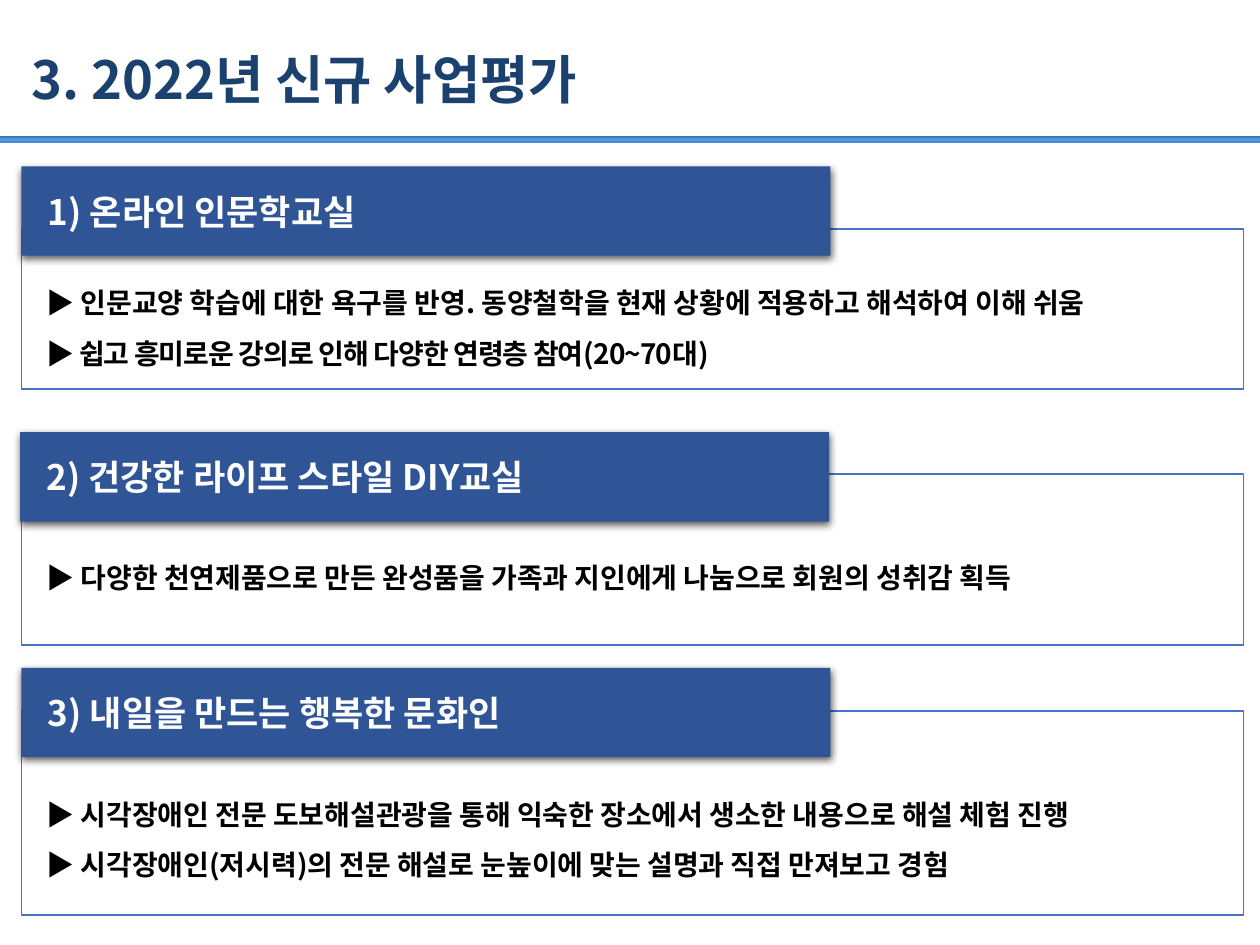
from copy import deepcopy

from pptx import Presentation
from pptx.dml.color import RGBColor as Color
from pptx.enum.shapes import MSO_SHAPE as Shape
from pptx.enum.text import MSO_ANCHOR as Anchor, MSO_AUTO_SIZE as AutoSize, PP_ALIGN as Align
from pptx.oxml.ns import qn
from pptx.oxml.xmlchemy import OxmlElement
from pptx.util import Inches, Pt

FONT = "Noto Sans CJK KR"
COLORS = {
    "title": "1B416F", "header": "2F5597", "border": "4472C4",
    "white": "FFFFFF", "black": "000000",
    "rule_top": "3469B6", "rule_middle": "559BDB", "rule_bottom": "448ACA",
}
COLUMNS, ROWS = 100, 75
COMPARISON_LAYOUT = 4
SECTIONS = [
    {"heading": "1) 온라인 인문학교실", "header_at": (1.7, 13.2),
     "frame_at": (1.7, 18.2, 97, 12.7), "top": 0.31,
     "lines": [("▶ 인문교양 학습에 대한 욕구를 반영. 동양철학을 현재 상황에 적용하고 해석하여 이해 쉬움", 0),
               ("▶ 쉽고 흥미로운 강의로 인해 다양한 연령층 참여(20~70대)", -0.5)]},
    {"heading": "2) 건강한 라이프 스타일 DIY교실", "header_at": (1.6, 34.3),
     "frame_at": (1.7, 37.6, 97, 13.6), "top": 0.55,
     "lines": [("▶ 다양한 천연제품으로 만든 완성품을 가족과 지인에게 나눔으로 회원의 성취감 획득", 0)]},
    {"heading": "3) 내일을 만드는 행복한 문화인", "header_at": (1.7, 53),
     "frame_at": (1.7, 56.4, 97, 16.2), "top": 0.55,
     "lines": [("▶ 시각장애인 전문 도보해설관광을 통해 익숙한 장소에서 생소한 내용으로 해설 체험 진행", 0),
               ("▶ 시각장애인(저시력)의 전문 해설로 눈높이에 맞는 설명과 직접 만져보고 경험", 0)]},
]


def add_child(parent, tag, **attributes):
    child = OxmlElement(tag)
    for name, value in attributes.items():
        child.set(name, str(value))
    parent.append(child)
    return child


def write_text(paragraph, text, size, color, spacing=0, line_height=None):
    paragraph.alignment = Align.LEFT
    paragraph.space_before = paragraph.space_after = Pt(0)
    paragraph.line_spacing = Pt(line_height) if line_height else 1.0
    properties = paragraph._p.get_or_add_pPr()
    properties.set("marL", "0")
    properties.set("indent", "0")
    add_child(properties, "a:buNone")
    run = paragraph.add_run()
    run.text = text
    font = run.font
    font.name, font.size, font.bold = FONT, Pt(size), True
    font.color.rgb = Color.from_string(COLORS[color])
    add_child(run._r.rPr, "a:ea", typeface=FONT)
    if spacing:
        run._r.rPr.set("spc", str(int(spacing * 100)))


class SlideBuilder:
    """Builds the elements of one slide on a shared grid and style."""

    def __init__(self, presentation):
        self.column = presentation.slide_width / COLUMNS
        self.row = presentation.slide_height / ROWS
        self.slide = presentation.slides.add_slide(presentation.slide_layouts[COMPARISON_LAYOUT])
        self.bodies = [shape for shape in self.slide.placeholders
                       if shape.placeholder_format.idx != 0]

    def box(self, left, top, width, height):
        return (int(left * self.column), int(top * self.row),
                int(width * self.column), int(height * self.row))

    def place(self, shape, *cells):
        shape.left, shape.top, shape.width, shape.height = self.box(*cells)

    def frame_text(self, shape, anchor, left, top, right, bottom):
        frame = shape.text_frame
        frame.word_wrap = True
        frame.auto_size = AutoSize.NONE
        frame.vertical_anchor = anchor
        frame.margin_left, frame.margin_top = Inches(left), Inches(top)
        frame.margin_right, frame.margin_bottom = Inches(right), Inches(bottom)
        return frame

    def rectangle(self, *cells):
        shape = self.slide.shapes.add_shape(Shape.RECTANGLE, *self.box(*cells))
        shape.line.fill.background()
        shape.shadow.inherit = False
        return shape

    def title(self, text):
        shape = self.slide.shapes.title
        self.place(shape, 0, 2.6, 100, 7.2)
        frame = self.frame_text(shape, Anchor.MIDDLE, 0.25, 0.04, 0.07, 0.04)
        write_text(frame.paragraphs[0], text, 30, "title")

    def rule(self):
        shape = self.rectangle(0, 10.8, 100, 0.5)
        shape.fill.gradient()
        shape.fill.gradient_angle = 270
        stops = shape._element.spPr.find(".//" + qn("a:gsLst"))
        stops.insert(1, deepcopy(stops[0]))
        names = ("rule_top", "rule_middle", "rule_bottom")
        for index, (stop, name) in enumerate(zip(shape.fill.gradient_stops, names)):
            stop.position = index / 2
            stop.color.rgb = Color.from_string(COLORS[name])

    def body(self, cells, top, lines):
        shape = self.bodies.pop(0)
        self.place(shape, *cells)
        shape.fill.solid()
        shape.fill.fore_color.rgb = Color.from_string(COLORS["white"])
        shape.line.color.rgb = Color.from_string(COLORS["border"])
        shape.line.width = Pt(1)
        frame = self.frame_text(shape, Anchor.TOP, 0.2, top, 0.2, 0)
        for index, (text, spacing) in enumerate(lines):
            paragraph = frame.add_paragraph() if index else frame.paragraphs[0]
            write_text(paragraph, text, 16, "black", spacing=spacing, line_height=29)

    def header(self, position, text):
        shape = self.rectangle(*position, 64.2, 7.1)
        shape.fill.solid()
        shape.fill.fore_color.rgb = Color.from_string(COLORS["header"])
        effects = shape._element.spPr.find(qn("a:effectLst"))
        shadow = add_child(effects, "a:outerShdw", blurRad=Pt(4.5), dist=Pt(1.5),
                           dir=5400000, algn="ctr", rotWithShape=0)
        add_child(add_child(shadow, "a:srgbClr", val=COLORS["black"]), "a:alpha", val=63000)
        frame = self.frame_text(shape, Anchor.MIDDLE, 0.21, 0.05, 0.1, 0.05)
        write_text(frame.paragraphs[0], text, 20, "white")

    def remove_unused(self):
        for shape in self.bodies:
            shape._element.getparent().remove(shape._element)


def main():
    presentation = Presentation()
    presentation.slide_width, presentation.slide_height = Inches(10), Inches(7.5)
    builder = SlideBuilder(presentation)
    builder.title("3. 2022년 신규 사업평가")
    builder.rule()
    for section in SECTIONS:
        builder.body(section["frame_at"], section["top"], section["lines"])
        builder.header(section["header_at"], section["heading"])
    builder.remove_unused()
    presentation.save("out.pptx")


if __name__ == "__main__":
    main()
